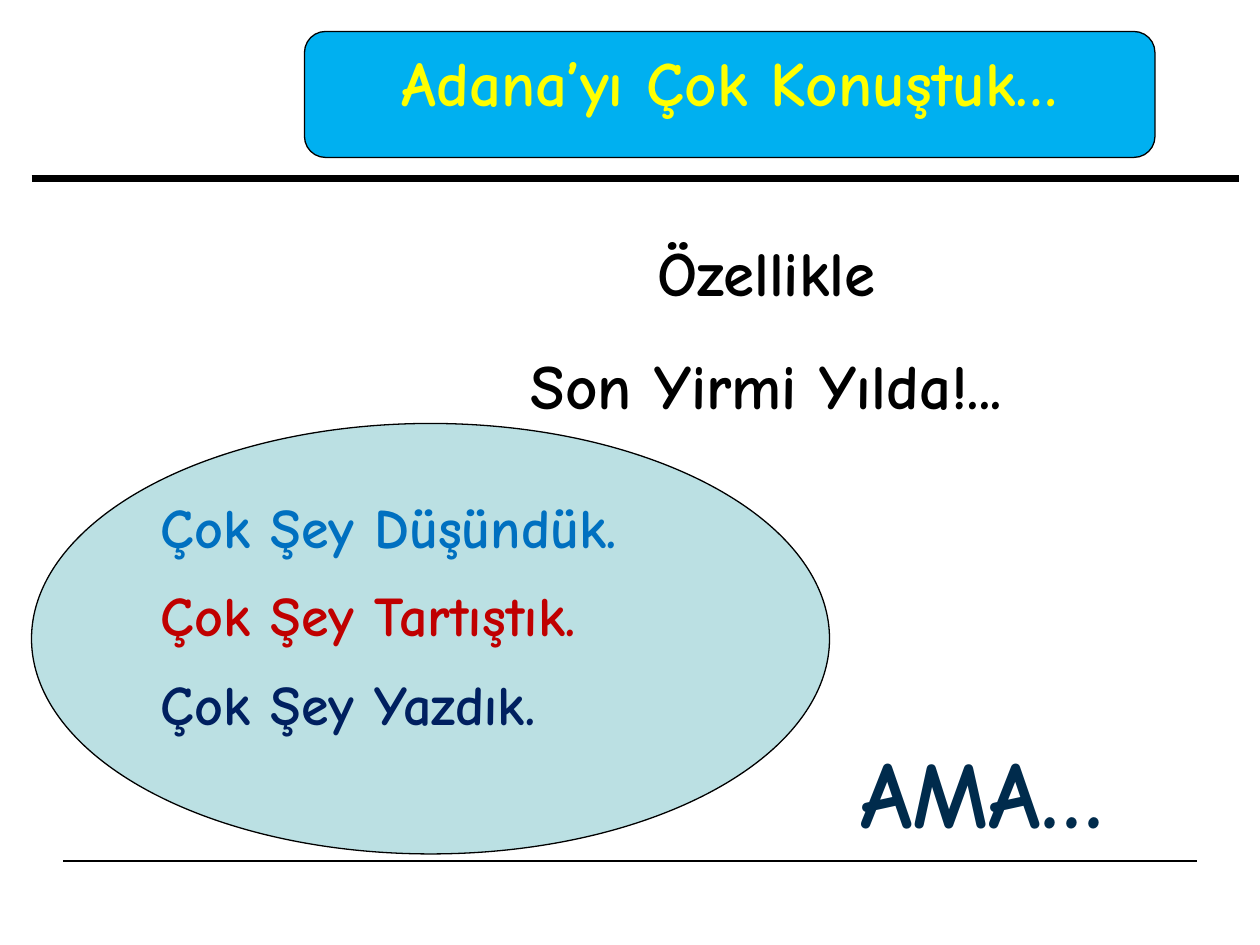
from pptx import Presentation
from pptx.dml.color import RGBColor
from pptx.enum.shapes import MSO_CONNECTOR as Connector, MSO_SHAPE as Shape
from pptx.enum.text import MSO_ANCHOR as Anchor, PP_ALIGN as Align
from pptx.oxml.ns import qn
from pptx.util import Pt
from lxml.etree import SubElement

FONT = "Comic Neue"
BLACK = RGBColor(0x00, 0x00, 0x00)
SKY = RGBColor(0x00, 0xB0, 0xF0)
YELLOW = RGBColor(0xFF, 0xFF, 0x00)
PALE_TEAL = RGBColor(0xBB, 0xE0, 0xE3)
BLUE = RGBColor(0x00, 0x70, 0xC0)
RED = RGBColor(0xC0, 0x00, 0x00)
NAVY = RGBColor(0x00, 0x20, 0x60)
DEEP_BLUE = RGBColor(0x00, 0x2B, 0x4C)


def add_rule(page, left, right, top, weight):
    rule = page.shapes.add_connector(
        Connector.STRAIGHT, Pt(left), Pt(top), Pt(right), Pt(top))
    rule.line.color.rgb = BLACK
    rule.line.width = Pt(weight)
    SubElement(rule._element.spPr, qn("a:effectLst"))


def add_panel(page, kind, left, top, width, height, fill):
    panel = page.shapes.add_shape(kind, Pt(left), Pt(top), Pt(width), Pt(height))
    panel.shadow.inherit = False
    panel.fill.solid()
    panel.fill.fore_color.rgb = fill
    panel.line.color.rgb = BLACK
    panel.line.width = Pt(0.75)
    return panel


def add_text_box(page, left, top, width, height):
    return page.shapes.add_textbox(Pt(left), Pt(top), Pt(width), Pt(height))


def write(box, text, size, color, align=Align.CENTER, first=True,
          line_spacing=None, space_after=None):
    """Write one paragraph into a box; a newline becomes a line break."""
    frame = box.text_frame
    frame.word_wrap = True
    frame.vertical_anchor = Anchor.TOP
    para = frame.paragraphs[0] if first else frame.add_paragraph()
    para.text = text
    para.alignment = align
    para.line_spacing = line_spacing
    if space_after is not None:
        para.space_after = Pt(space_after)
    for span in para.runs:
        span.font.name = FONT
        span.font.size = Pt(size)
        span.font.bold = True
        span.font.color.rgb = color


def main():
    deck = Presentation()
    deck.slide_width, deck.slide_height = Pt(720), Pt(540)
    page = deck.slides.add_slide(deck.slide_layouts[6])

    # Rules under the heading and above the footer
    add_rule(page, 18, 708, 102, 4.5)
    add_rule(page, 36, 684, 492, 1)

    # Lead-in
    lead = add_text_box(page, 210, 108, 456, 126)
    write(lead, "Özellikle\nSon Yirmi Yılda!...", 36, BLACK, line_spacing=1.5)

    # Heading
    heading = add_panel(page, Shape.ROUNDED_RECTANGLE, 174, 18, 486, 72, SKY)
    write(heading, "Adana’yı Çok Konuştuk…", 36, YELLOW)

    # Closing word
    closing = add_text_box(page, 450, 416, 222, 73)
    write(closing, "AMA…", 54, DEEP_BLUE)

    # What was done so far
    oval = add_panel(page, Shape.OVAL, 18, 242, 456, 246, PALE_TEAL)
    deeds = [("Çok Şey Düşündük.", BLUE),
             ("Çok Şey Tartıştık.", RED),
             ("Çok Şey Yazdık.", NAVY)]
    for index, (deed, color) in enumerate(deeds):
        write(oval, deed, 32, color, align=Align.LEFT,
              first=index == 0, space_after=12)

    deck.save("out.pptx")


if __name__ == "__main__":
    main()
